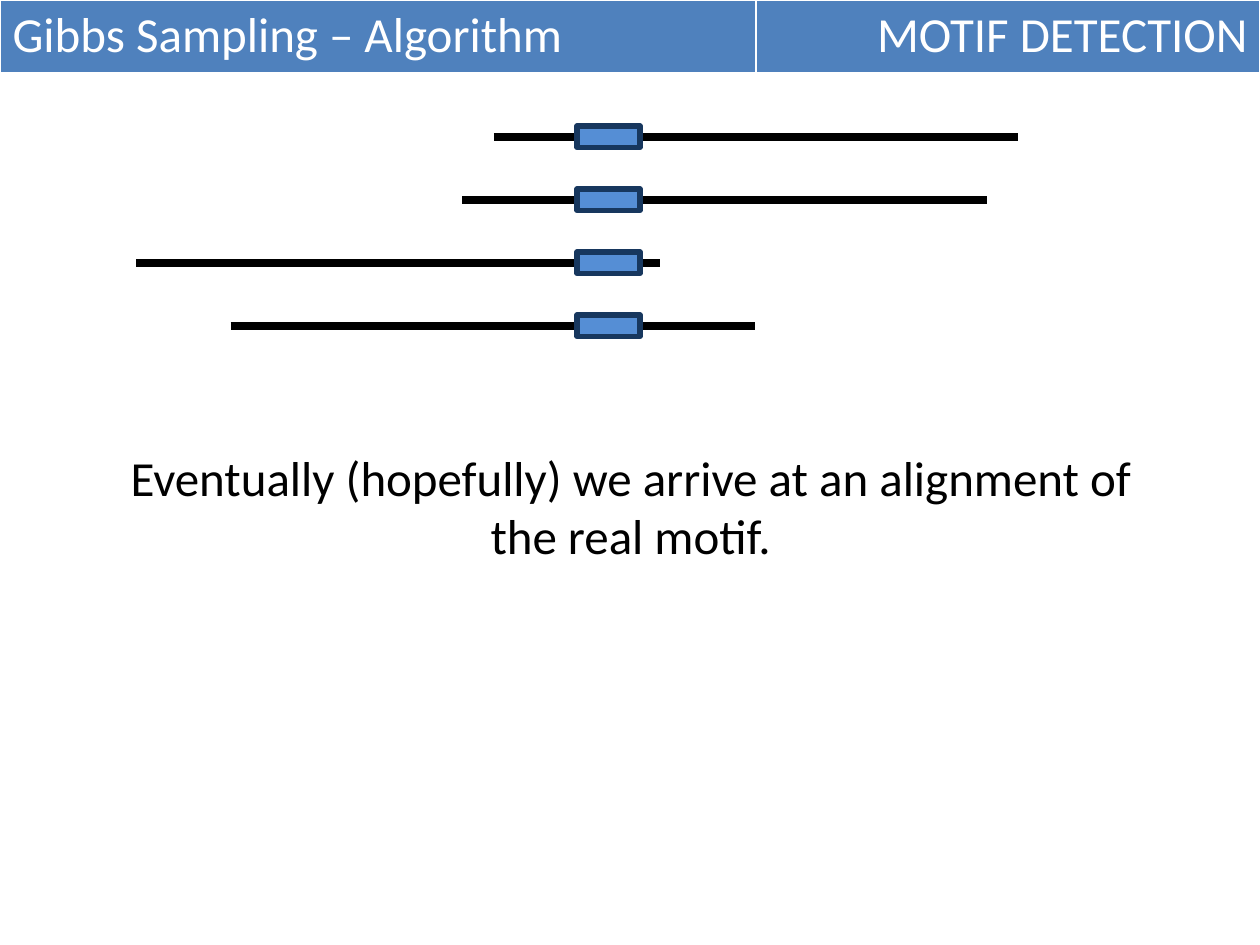
from lxml import etree
from pptx import Presentation
from pptx.dml.color import RGBColor
from pptx.enum.shapes import MSO_CONNECTOR, MSO_SHAPE
from pptx.enum.text import MSO_ANCHOR, PP_ALIGN
from pptx.oxml.ns import qn
from pptx.util import Inches, Pt

LINE = MSO_CONNECTOR.STRAIGHT
RECT = MSO_SHAPE.RECTANGLE
MIDDLE = MSO_ANCHOR.MIDDLE
LEFT, CENTER, RIGHT = PP_ALIGN.LEFT, PP_ALIGN.CENTER, PP_ALIGN.RIGHT
FONT = "Calibri"
COLORS = {"band": "4F81BD", "light": "FFFFFF", "dark": "000000",
          "motif": "558ED5", "edge": "17375E"}


def color(name):
    """Return the named colour."""
    return RGBColor.from_string(COLORS[name])


def write(frame, text, align, tint):
    """Set one paragraph of 28 point text."""
    para = frame.paragraphs[0]
    para.text = text
    para.alignment = align
    font = para.runs[0].font
    font.name, font.size, font.bold = FONT, Pt(28), False
    font.color.rgb = color(tint)


def add_header(slide, left, top, width, height):
    """Add the title band as a table of one row."""
    table = slide.shapes.add_table(1, 2, Inches(left), Inches(top),
                                   Inches(width), Inches(height)).table
    table.first_row = table.horz_banding = False
    items = [("Gibbs Sampling – Algorithm", LEFT, 0.6),
             ("MOTIF DETECTION", RIGHT, 0.4)]
    for col, (text, align, share) in enumerate(items):
        table.columns[col].width = Inches(width * share)
        cell = table.cell(0, col)
        cell.fill.solid()
        cell.fill.fore_color.rgb = color("band")
        write(cell.text_frame, text, align, "light")
    table.cell(0, 1).vertical_anchor = MIDDLE


def add_strand(slide, left, mid, width):
    """Add one sequence as a thick line."""
    line = slide.shapes.add_connector(LINE, Inches(left), Inches(mid),
                                      Inches(left + width), Inches(mid))
    line.line.color.rgb = color("dark")
    line.line.width = Pt(4.5)
    etree.SubElement(line._element.spPr, qn("a:effectLst"))


def add_motif(slide, left, mid, width, height):
    """Add one motif box centred on its sequence."""
    box = slide.shapes.add_shape(RECT, Inches(left), Inches(mid - height / 2),
                                 Inches(width), Inches(height))
    box.shadow.inherit = False
    box.fill.solid()
    box.fill.fore_color.rgb = color("motif")
    box.line.color.rgb = color("edge")
    box.line.width = Pt(3)


def add_strands(slide, left, top, width, height):
    """Add the sequences, aligned on their motif."""
    shifts = [2.84, 2.59, 0, 0.75]
    size = 0.17
    step = (height - size) / (len(shifts) - 1)
    for row, shift in enumerate(shifts):
        mid = top + size / 2 + row * step
        add_strand(slide, left + shift, mid, width - max(shifts))
        add_motif(slide, left + 3.5, mid, 0.5, size)


def add_note(slide, left, top, width, height):
    """Add the closing remark."""
    frame = slide.shapes.add_textbox(Inches(left), Inches(top), Inches(width),
                                     Inches(height)).text_frame
    frame.word_wrap = True
    write(frame, "Eventually (hopefully) we arrive at an alignment of "
          "the real motif.", CENTER, "dark")


def main():
    """Build and save the slide."""
    deck = Presentation()
    deck.slide_width, deck.slide_height = Inches(10), Inches(7.5)
    slide = deck.slides.add_slide(deck.slide_layouts[6])
    add_header(slide, 0, 0, 10, 0.57)
    add_strands(slide, 1.08, 1, 7, 1.67)
    add_note(slide, 0.67, 3.5, 8.67, 1.04)
    deck.save("out.pptx")


if __name__ == "__main__":
    main()
